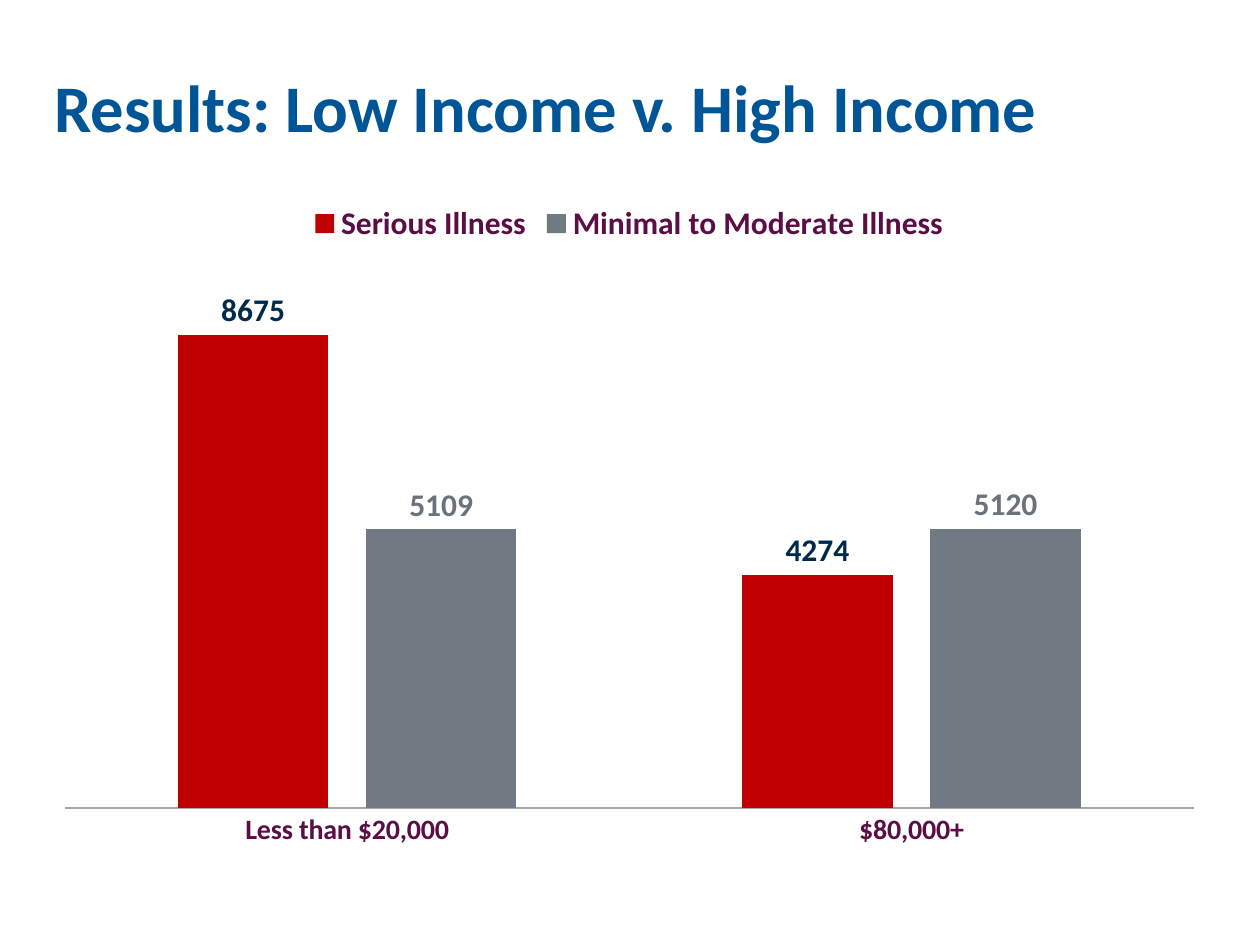
import pptx
import pptx.chart.data
import pptx.dml.color
import pptx.enum.chart
import pptx.enum.text
import pptx.util
from pptx.util import Inches

TITLE = "Results: Low Income v. High Income"
CATEGORIES = ["Less than $20,000", "$80,000+"]
SERIES = [
    ("Serious Illness", (8675, 4274), "red", "navy"),
    ("Minimal to Moderate Illness", (5109, 5120), "gray", "slate"),
]
COLORS = {
    "blue": "005596",
    "red": "C00000",
    "gray": "717A83",
    "navy": "002A4B",
    "slate": "6A737B",
    "plum": "5B0D45",
    "axis": "A6A6A6",
}
FONTS = {
    "title": {"size": 38, "bold": True, "color": "blue"},
    "chart": {"size": 10, "bold": False, "color": "slate"},
    "category": {"size": 16, "bold": True, "color": "plum"},
    "legend": {"size": 18, "bold": True, "color": "plum"},
}


def rgb(name):
    return pptx.dml.color.RGBColor.from_string(COLORS[name])


def style(font, size, bold, color):
    values = {"name": "Calibri", "size": pptx.util.Pt(size), "bold": bold}
    for key, value in values.items():
        setattr(font, key, value)
    font.color.rgb = rgb(color)


def add_title(s):
    sp = s.shapes.title
    box = {"left": 0.33, "top": 0.43, "width": 9.4, "height": 0.82}
    for key, value in box.items():
        setattr(sp, key, Inches(value))
    tf = sp.text_frame
    tf.word_wrap = True
    tf.vertical_anchor = pptx.enum.text.MSO_ANCHOR.MIDDLE
    p = tf.paragraphs[0]
    p.alignment = pptx.enum.text.PP_ALIGN.LEFT
    r = p.add_run()
    r.text = TITLE
    style(r.font, **FONTS["title"])


def add_income_chart(s):
    data = pptx.chart.data.CategoryChartData()
    data.categories = CATEGORIES
    for name, values, _, _ in SERIES:
        data.add_series(name, values)
    chart = s.shapes.add_chart(
        pptx.enum.chart.XL_CHART_TYPE.COLUMN_CLUSTERED,
        Inches(0.33), Inches(1.5), Inches(9.33), Inches(5.33), data,
    ).chart
    chart.has_title = False
    style(chart.font, **FONTS["chart"])

    chart.has_legend = True
    chart.legend.position = pptx.enum.chart.XL_LEGEND_POSITION.TOP
    chart.legend.include_in_layout = False
    style(chart.legend.font, **FONTS["legend"])

    axis = chart.category_axis
    axis.major_tick_mark = pptx.enum.chart.XL_TICK_MARK.NONE
    axis.format.line.color.rgb = rgb("axis")
    style(axis.tick_labels.font, **FONTS["category"])

    scale = {
        "visible": False,
        "has_major_gridlines": False,
        "minimum_scale": 0,
        "maximum_scale": 10000,
    }
    for key, value in scale.items():
        setattr(chart.value_axis, key, value)

    plot = chart.plots[0]
    for key, value in {"gap_width": 150, "overlap": -25, "vary_by_categories": False}.items():
        setattr(plot, key, value)
    for series, (_, _, fill, label) in zip(plot.series, SERIES):
        series.format.fill.solid()
        series.format.fill.fore_color.rgb = rgb(fill)
        labels = series.data_labels
        labels.show_value = True
        labels.position = pptx.enum.chart.XL_LABEL_POSITION.OUTSIDE_END
        style(labels.font, size=18, bold=True, color=label)


def main():
    prs = pptx.Presentation()
    prs.slide_width = Inches(10)
    prs.slide_height = Inches(7.5)
    s = prs.slides.add_slide(prs.slide_layouts[5])
    add_title(s)
    add_income_chart(s)
    prs.save("out.pptx")


if __name__ == "__main__":
    main()
